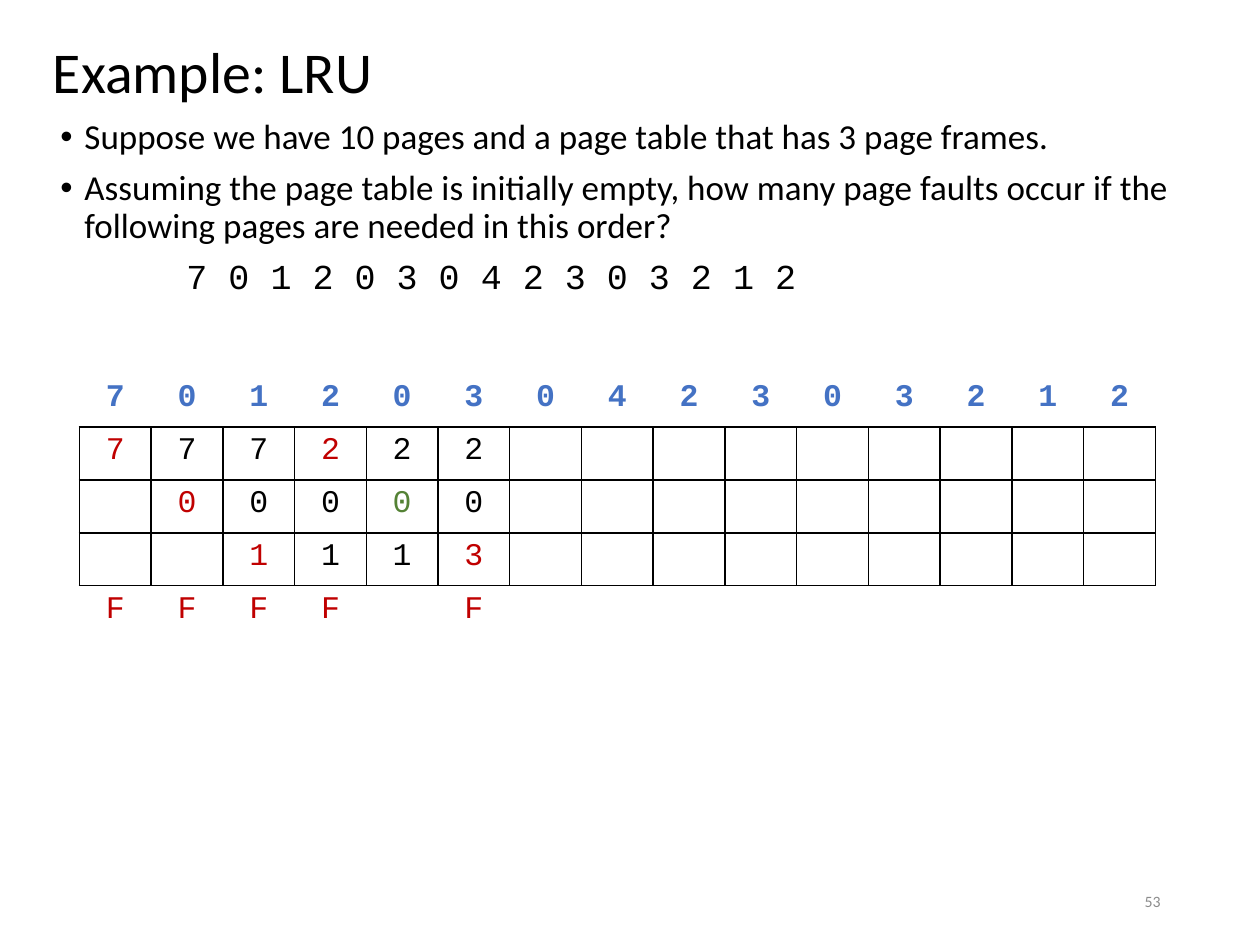
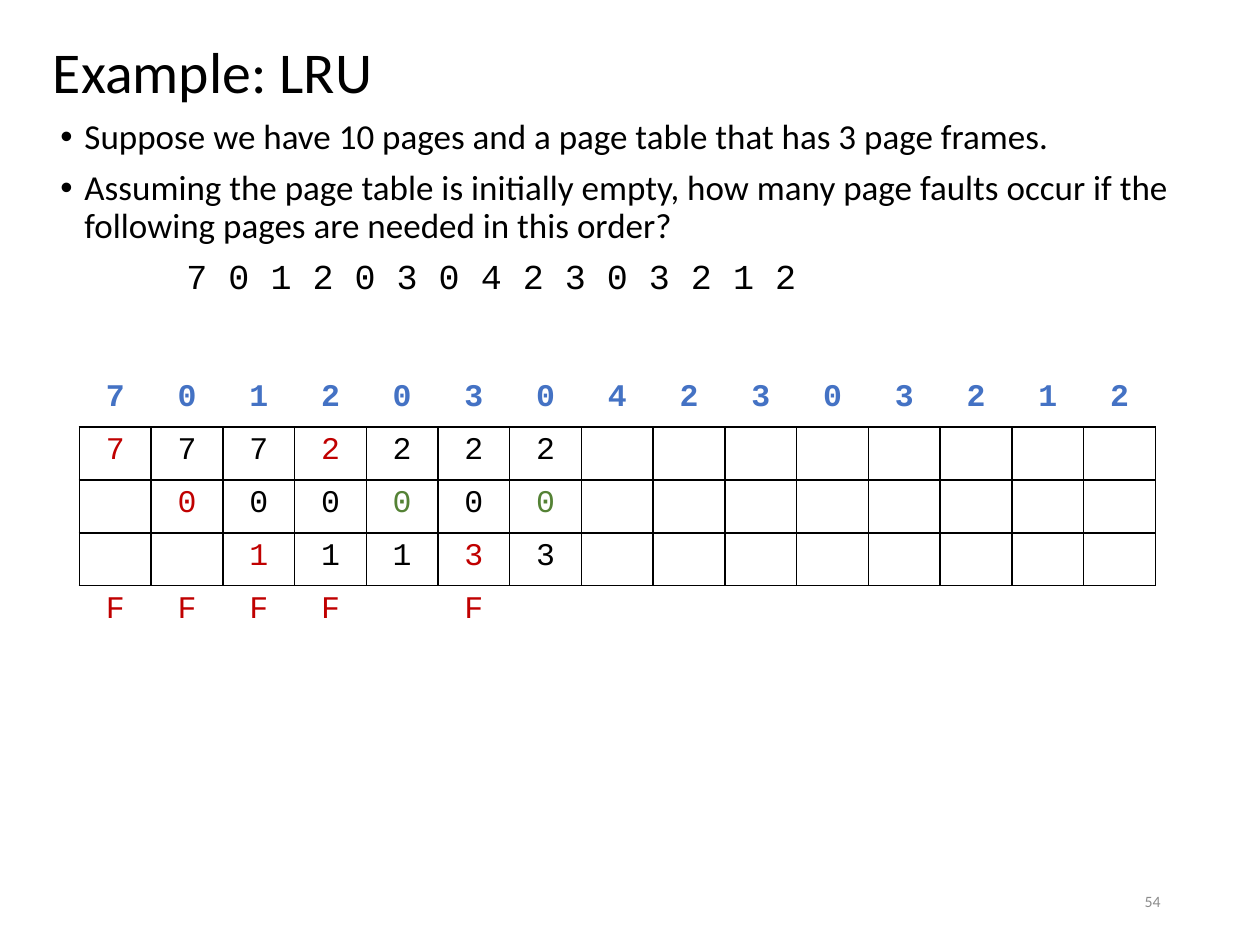
from dataclasses import dataclass

from pptx import Presentation
from pptx.dml.color import RGBColor
from pptx.enum import text as tx
from pptx.oxml import parse_xml
from pptx.oxml.ns import nsdecls
from pptx.util import Inches, Pt


@dataclass(frozen=True)
class Theme:
    sans: str = "Calibri"
    mono: str = "Courier New"
    ink: str = "000000"
    blue: str = "4472C4"
    red: str = "C00000"
    green: str = "548235"
    gray: str = "8C8C8C"
    title: int = 33
    body: int = 20
    cell: int = 18
    foot: int = 9


T = Theme()
TITLE = (0.32, 0.1, 9.35, 0.99)
BODY = (0.38, 0.9, 9.3, 6.5)
FOOT = (7.06, 6.95, 2.25, 0.4)
GRID = (0.63, 2.97, 8.54, 2.1)
PAGES = "7 0 1 2 0 3 0 4 2 3 0 3 2 1 2".split()
FRAMES = 3
PLAIN = "{2D5ABB26-0587-4C30-8999-92F81FD0307C}"
POINTS = [
    "Suppose we have 10 pages and a page table that has 3 page frames.",
    "Assuming the page table is initially empty, how many page faults occur "
    "if the following pages are needed in this order?",
]


def place(shape, box):
    shape.left, shape.top, shape.width, shape.height = map(Inches, box)


def style(para, size, color=T.ink, face=T.sans, bold=False):
    for run in para.runs:
        font = run.font
        font.size, font.name, font.bold = Pt(size), face, bold
        font.color.rgb = RGBColor.from_string(color)


def add_title(slide, box):
    shape = slide.shapes.title
    place(shape, box)
    frame = shape.text_frame
    frame.text = "Example: LRU"
    frame.vertical_anchor = tx.MSO_ANCHOR.MIDDLE
    frame.auto_size = tx.MSO_AUTO_SIZE.NONE
    para = frame.paragraphs[0]
    para.alignment, para.line_spacing = tx.PP_ALIGN.LEFT, 0.9
    style(para, T.title)


def add_body(slide, box):
    shape = slide.placeholders[1]
    place(shape, box)
    frame = shape.text_frame
    frame.text = "\n".join(POINTS + [" ".join(PAGES)])
    frame.auto_size = tx.MSO_AUTO_SIZE.NONE
    for i, para in enumerate(frame.paragraphs):
        listed = i < len(POINTS)
        # Bulleted points hang; the page sequence is indented without a bullet
        props = para._p.get_or_add_pPr()
        props.set("marL", str(Inches(0.19 if listed else 1)))
        props.set("indent", str(Inches(-0.19 if listed else 0)))
        marks = ['buFont {} typeface="Arial"', 'buChar {} char="•"'] if listed else ["buNone {}"]
        for mark in marks:
            props.append(parse_xml("<a:" + mark.format(nsdecls("a")) + "/>"))
        para.line_spacing = 0.9
        para.space_before = Pt(7.5 if i else 0)
        style(para, T.body, face=T.sans if listed else T.mono)


def add_foot(slide, box, number):
    frame = slide.shapes.add_textbox(*map(Inches, box)).text_frame
    frame.word_wrap = True
    frame.vertical_anchor = tx.MSO_ANCHOR.MIDDLE
    frame.text = str(number)
    para = frame.paragraphs[0]
    para.alignment = tx.PP_ALIGN.RIGHT
    style(para, T.foot, T.gray)


def run_lru(steps):
    """Return the filled cells as {(row, column): (text, color)}."""
    cells, held, used = {}, [], {}
    for col, page in enumerate(PAGES[:steps]):
        fault = page not in held
        if fault:
            if len(held) < FRAMES:
                held.append(page)
            else:
                oldest = min(held, key=used.get)
                held[held.index(oldest)] = page
            cells[FRAMES + 1, col] = ("F", T.red)
        used[page] = col
        for row, item in enumerate(held, 1):
            color = T.ink if item != page else T.red if fault else T.green
            cells[row, col] = (item, color)
    return cells


def rule_cell(cell, sides):
    props = cell._tc.get_or_add_tcPr()
    for i, side in enumerate(sides):
        props.insert(i, parse_xml(
            f'<a:ln{side} {nsdecls("a")} w="{Pt(1)}"><a:solidFill>'
            f'<a:srgbClr val="{T.ink}"/></a:solidFill></a:ln{side}>'))


def add_grid(slide, box, steps):
    rows, cols = FRAMES + 2, len(PAGES)
    table = slide.shapes.add_table(rows, cols, *map(Inches, box)).table
    table.first_row = table.horz_banding = False
    table._tbl.tblPr.find("{*}tableStyleId").text = PLAIN
    for col in table.columns:
        col.width = Inches(box[2] / cols)
    for row in table.rows:
        row.height = Inches(box[3] / rows)

    # Header pages, frame contents, then fault marks
    filled = {(0, c): (page, T.blue) for c, page in enumerate(PAGES)}
    filled.update(run_lru(steps))
    edges = {0: "B", rows - 1: "T"}
    for r in range(rows):
        for c in range(cols):
            cell = table.cell(r, c)
            cell.fill.background()
            rule_cell(cell, edges.get(r, "LRTB"))
            if (r, c) in filled:
                word, color = filled[r, c]
                cell.text_frame.text = word
                para = cell.text_frame.paragraphs[0]
                para.alignment = tx.PP_ALIGN.CENTER
                style(para, T.cell, color, T.mono, bold=r == 0)


def add_step(deck, number, steps):
    slide = deck.slides.add_slide(deck.slide_layouts[1])
    add_body(slide, BODY)
    add_title(slide, TITLE)
    add_foot(slide, FOOT, number)
    add_grid(slide, GRID, steps)


def main():
    deck = Presentation()
    deck.slide_width, deck.slide_height = Inches(10), Inches(7.5)
    for number, steps in ((53, 6), (54, 7)):
        add_step(deck, number, steps)
    deck.save("out.pptx")


if __name__ == "__main__":
    main()
